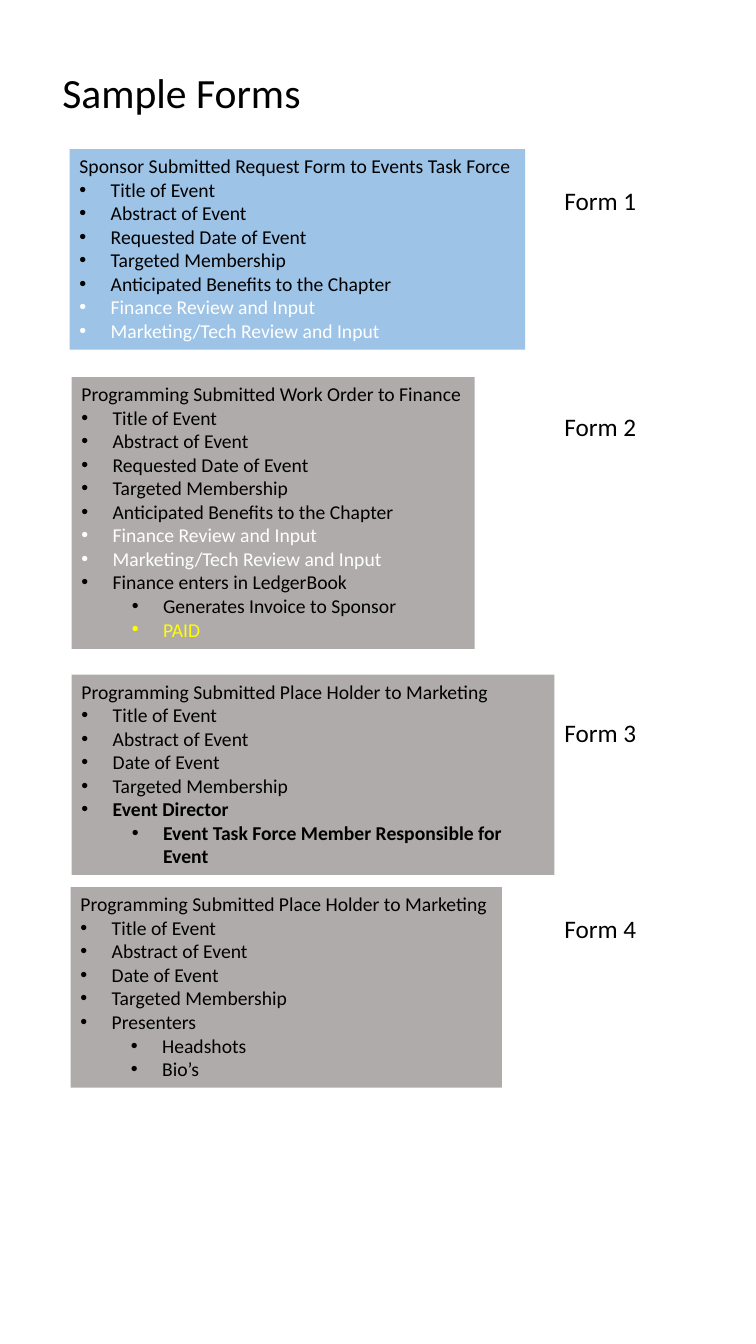
from lxml import etree
from pptx import Presentation
from pptx.dml.color import RGBColor
from pptx.enum.text import MSO_ANCHOR, MSO_AUTO_SIZE
from pptx.oxml.ns import qn
from pptx.util import Inches, Pt

PAGE_WIDTH, PAGE_HEIGHT = Inches(7.5), Inches(13.33)
COLUMN, ROW = PAGE_WIDTH / 75, PAGE_HEIGHT / 133.3
MIDDLE = MSO_ANCHOR.MIDDLE
GROW = MSO_AUTO_SIZE.SHAPE_TO_FIT_TEXT

BLACK = RGBColor(0x00, 0x00, 0x00)
WHITE = RGBColor(0xFF, 0xFF, 0xFF)
YELLOW = RGBColor(0xFF, 0xFF, 0x00)
BLUE = RGBColor(0x9D, 0xC3, 0xE6)
GRAY = RGBColor(0xAF, 0xAB, 0xAB)

FONT = "Calibri"
LINE_ROWS, PADDING_ROWS = 2.36, 1
LABEL_LEFT, LABEL_WIDTH, LABEL_HEIGHT = 55, 9.2, 4
HANGING, LEVEL_STEP = 0.31, 0.5

# An item is (text, level, colour, bold).
TITLE_ITEM = ("Title of Event", 0, BLACK, False)
ABSTRACT_ITEM = ("Abstract of Event", 0, BLACK, False)
MEMBERSHIP_ITEM = ("Targeted Membership", 0, BLACK, False)
REQUEST_ITEMS = [
    TITLE_ITEM,
    ABSTRACT_ITEM,
    ("Requested Date of Event", 0, BLACK, False),
    MEMBERSHIP_ITEM,
    ("Anticipated Benefits to the Chapter", 0, BLACK, False),
    ("Finance Review and Input", 0, WHITE, False),
    ("Marketing/Tech Review and Input", 0, WHITE, False),
]
INVOICE_ITEMS = [
    ("Finance enters in LedgerBook", 0, BLACK, False),
    ("Generates Invoice to Sponsor", 1, BLACK, False),
    ("PAID", 1, YELLOW, False),
]
PLACE_HOLDER_ITEMS = [
    TITLE_ITEM,
    ABSTRACT_ITEM,
    ("Date of Event", 0, BLACK, False),
    MEMBERSHIP_ITEM,
]
DIRECTOR_ITEMS = [
    ("Event Director", 0, BLACK, True),
    ("Event Task Force Member Responsible for Event", 1, BLACK, True),
]
PRESENTER_ITEMS = [
    ("Presenters", 0, BLACK, False),
    ("Headshots", 1, BLACK, False),
    ("Bio’s", 1, BLACK, False),
]
PLACE_HOLDER_HEADING = "Programming Submitted Place Holder to Marketing"

# A form is (left, top, width, lines, label top, wrap, fill, heading, items).
FORMS = [
    (6.9, 14.8, 45.2, 8, 17.9, False, BLUE,
     "Sponsor Submitted Request Form to Events Task Force", REQUEST_ITEMS),
    (7.1, 37.4, 40, 11, 40.3, False, GRAY,
     "Programming Submitted Work Order to Finance",
     REQUEST_ITEMS + INVOICE_ITEMS),
    (7.1, 66.9, 47.9, 8, 70.7, True, GRAY,
     PLACE_HOLDER_HEADING, PLACE_HOLDER_ITEMS + DIRECTOR_ITEMS),
    (7, 88, 42.8, 8, 90.1, False, GRAY,
     PLACE_HOLDER_HEADING, PLACE_HOLDER_ITEMS + PRESENTER_ITEMS),
]


def add_box(page, left, top, width, height, wrap=False):
    """Add a text box placed in columns and rows of the page grid."""
    box = page.shapes.add_textbox(round(left * COLUMN), round(top * ROW),
                                  round(width * COLUMN), round(height * ROW))
    box.text_frame.word_wrap = wrap
    return box


def add_span(para, text, size, color=BLACK, bold=False):
    span = para.add_run()
    span.text = text
    span.font.name = FONT
    span.font.size = Pt(size)
    span.font.color.rgb = color
    span.font.bold = bold


def add_bullet(para, level):
    para.level = level
    properties = para._p.get_or_add_pPr()
    properties.set("marL", str(Inches(HANGING + level * LEVEL_STEP)))
    properties.set("indent", str(-Inches(HANGING)))
    etree.SubElement(properties, qn("a:buFont")).set("typeface", "Arial")
    etree.SubElement(properties, qn("a:buChar")).set("char", "•")


def add_title(page, text):
    box = add_box(page, 5.2, 7.1, 64.7, 4.7, wrap=True)
    box.text_frame.vertical_anchor = MIDDLE
    para = box.text_frame.paragraphs[0]
    para.line_spacing = 0.9
    add_span(para, text, 29.7)


def add_form(page, left, top, width, lines, wrap, fill, heading, items):
    height = lines * LINE_ROWS + PADDING_ROWS
    box = add_box(page, left, top, width, height, wrap)
    box.fill.solid()
    box.fill.fore_color.rgb = fill
    frame = box.text_frame
    frame.auto_size = GROW
    add_span(frame.paragraphs[0], heading, 14)
    for text, level, color, bold in items:
        para = frame.add_paragraph()
        add_bullet(para, level)
        add_span(para, text, 14, color, bold)


def add_label(page, top, text):
    box = add_box(page, LABEL_LEFT, top, LABEL_WIDTH, LABEL_HEIGHT)
    box.text_frame.auto_size = GROW
    add_span(box.text_frame.paragraphs[0], text, 18)


def main():
    deck = Presentation()
    deck.slide_width, deck.slide_height = PAGE_WIDTH, PAGE_HEIGHT
    page = deck.slides.add_slide(deck.slide_layouts[6])
    add_title(page, "Sample Forms")
    for number, form in enumerate(FORMS, start=1):
        left, top, width, lines, label_top, wrap, fill, heading, items = form
        add_form(page, left, top, width, lines, wrap, fill, heading, items)
        add_label(page, label_top, f"Form {number}")
    deck.save("out.pptx")


if __name__ == "__main__":
    main()
